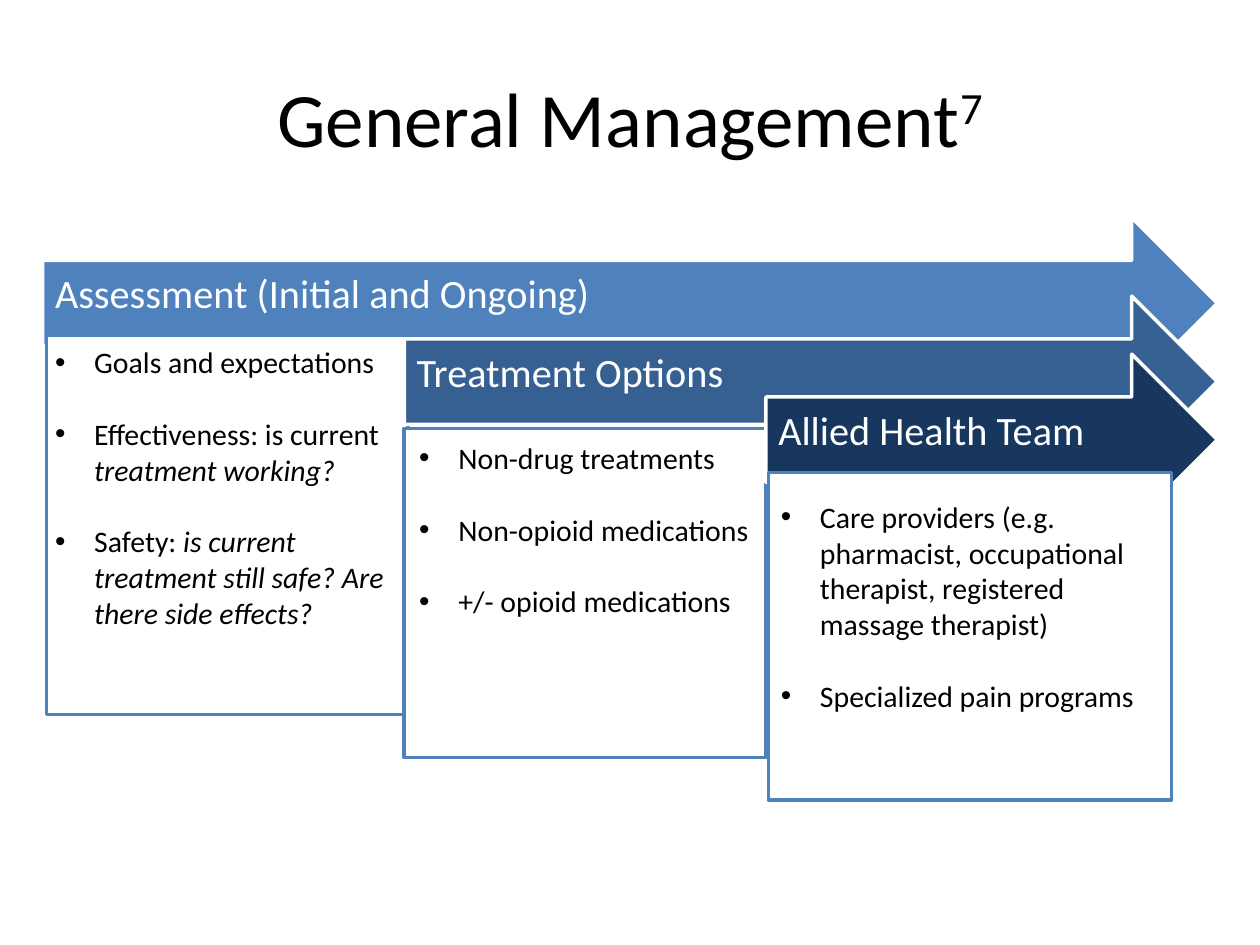
"""Build the General Management slide: three stepped arrows with bullet panels."""
from lxml import etree
from pptx import Presentation
from pptx.dml.color import RGBColor
from pptx.enum.shapes import MSO_SHAPE
from pptx.enum.text import MSO_ANCHOR, PP_ALIGN
from pptx.oxml.ns import qn
from pptx.util import Cm, Pt

ARROW, RECT = MSO_SHAPE.RIGHT_ARROW, MSO_SHAPE.RECTANGLE
MIDDLE, TOP = MSO_ANCHOR.MIDDLE, MSO_ANCHOR.TOP
LEFT, CENTER = PP_ALIGN.LEFT, PP_ALIGN.CENTER
BLACK = RGBColor(0x00, 0x00, 0x00)
WHITE = RGBColor(0xFF, 0xFF, 0xFF)
BLUE = RGBColor(0x4F, 0x81, 0xBD)
MID_BLUE = RGBColor(0x37, 0x60, 0x92)
NAVY = RGBColor(0x17, 0x37, 0x5E)
FONT = "Calibri"
ARROW_RIGHT, ARROW_HEIGHT = 24.54, 3.45
INDENT = Cm(0.79)

TITLE, REFERENCE = "General Management", "7"
STAGES = [
    {"head": "Assessment (Initial and Ongoing)", "color": BLUE, "arrow": (0.86, 4.39),
     "panel": (0.94, 6.76, 7.29, 7.65), "list": (0.86, 6.81, 7.62, 6.83),
     "items": [[("Goals and expectations", False)],
               [("Effectiveness: is current", False), (" treatment working?", True)],
               [("Safety: ", False),
                ("is current treatment still safe? Are there side effects?", True)]]},
    {"head": "Treatment Options", "color": MID_BLUE, "arrow": (8.15, 5.97),
     "panel": (8.15, 8.64, 7.29, 6.63), "list": (8.2, 8.74, 7.29, 4.65),
     "items": [[("Non-drug treatments", False)],
               [("Non-opioid medications", False)],
               [("+/- opioid medications", False)]]},
    {"head": "Allied Health Team", "color": NAVY, "arrow": (15.44, 7.14),
     "panel": (15.49, 9.53, 8.13, 6.6), "list": (15.49, 9.93, 7.98, 4.62),
     "items": [[("Care providers (e.g. pharmacist, occupational therapist, "
                 "registered massage therapist)", False)],
               [("Specialized pain programs", False)]]},
]


def add_run(p, text, size, color, italic=False):
    r = p.add_run()
    r.text = text
    r.font.name, r.font.size = FONT, Pt(size)
    r.font.color.rgb, r.font.italic = color, italic
    return r


def add_block(s, kind, box, fill, line):
    sp = s.shapes.add_shape(kind, *map(Cm, box))
    sp.shadow.inherit = False
    sp.fill.solid()
    sp.fill.fore_color.rgb = fill
    sp.line.color.rgb, sp.line.width = line, Pt(2)
    return sp


def add_arrow(s, stage):
    x, y = stage["arrow"]
    box = (x, y, ARROW_RIGHT - x, ARROW_HEIGHT)
    tf = add_block(s, ARROW, box, stage["color"], WHITE).text_frame
    tf.word_wrap, tf.vertical_anchor = True, MIDDLE
    tf.margin_left = tf.margin_top = Cm(0.25)
    tf.margin_right, tf.margin_bottom = Cm(0.71), Cm(0.56)
    p = tf.paragraphs[0]
    p.alignment, p.line_spacing = LEFT, 0.9
    add_run(p, stage["head"], 23, WHITE)


def add_list(s, stage):
    tf = s.shapes.add_textbox(*map(Cm, stage["list"])).text_frame
    tf.word_wrap, tf.vertical_anchor = True, TOP
    for i, item in enumerate(stage["items"]):
        p = tf.add_paragraph() if i else tf.paragraphs[0]
        p.space_before = Pt(20.5 if i else 0)
        pPr = p._p.get_or_add_pPr()
        pPr.set("marL", str(INDENT))
        pPr.set("indent", str(-INDENT))
        etree.SubElement(pPr, qn("a:buFont"), typeface="Arial")
        etree.SubElement(pPr, qn("a:buChar"), char="•")
        for text, italic in item:
            add_run(p, text, 17, BLACK, italic)


def main():
    prs = Presentation()
    prs.slide_width, prs.slide_height = Cm(25.4), Cm(19.05)
    s = prs.slides.add_slide(prs.slide_layouts[5])

    title = s.shapes.title
    title.left, title.top, title.width, title.height = map(Cm, (1.27, 0.76, 22.86, 3.18))
    title.text_frame.vertical_anchor = MIDDLE
    p = title.text_frame.paragraphs[0]
    p.alignment = CENTER
    add_run(p, TITLE, 44, BLACK)
    r = add_run(p, REFERENCE, 44, BLACK)
    r._r.get_or_add_rPr().set("baseline", "30000")

    for stage in STAGES:
        add_arrow(s, stage)
        add_block(s, RECT, stage["panel"], WHITE, BLUE)
    for stage in STAGES:
        add_list(s, stage)
    prs.save("out.pptx")


if __name__ == "__main__":
    main()
